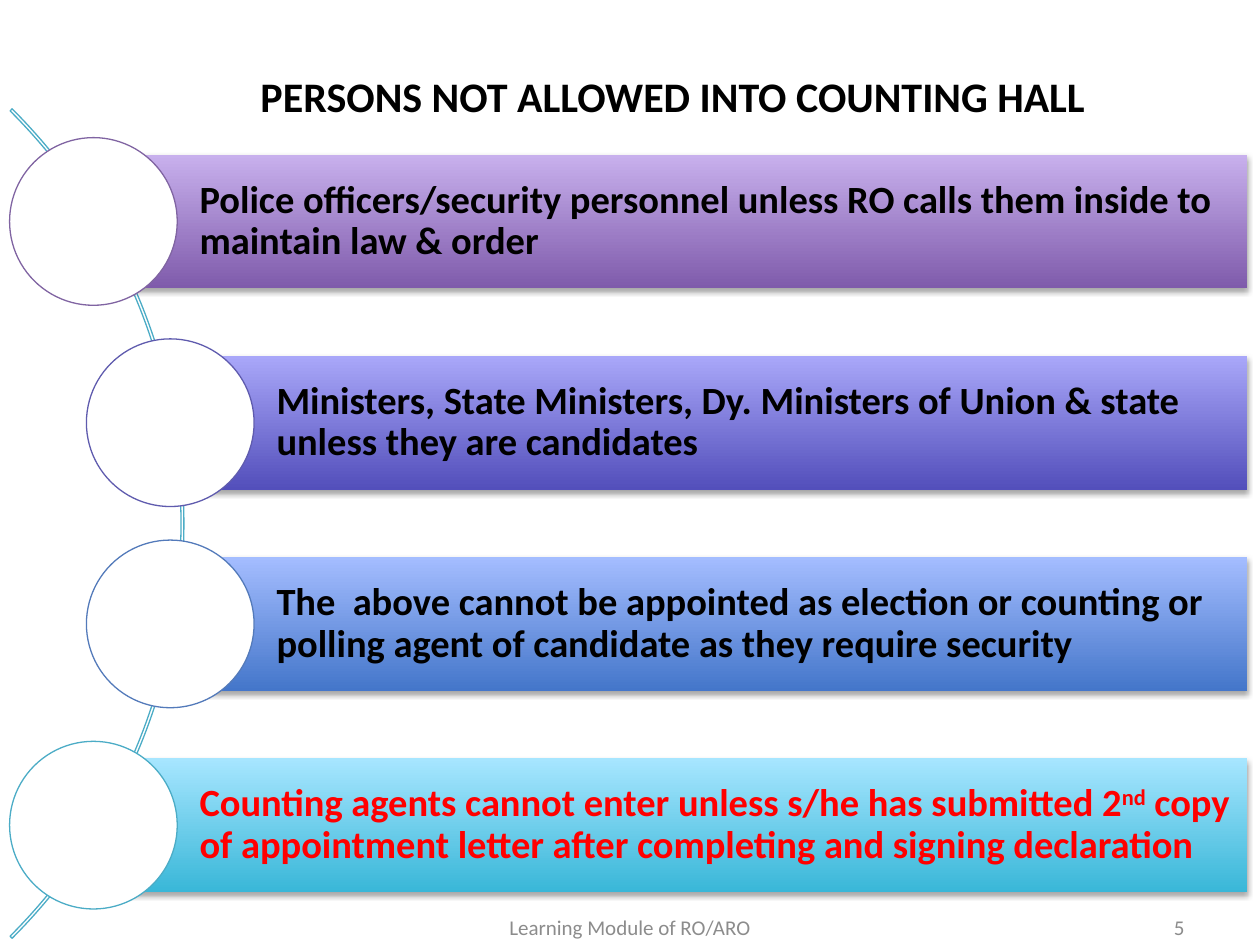
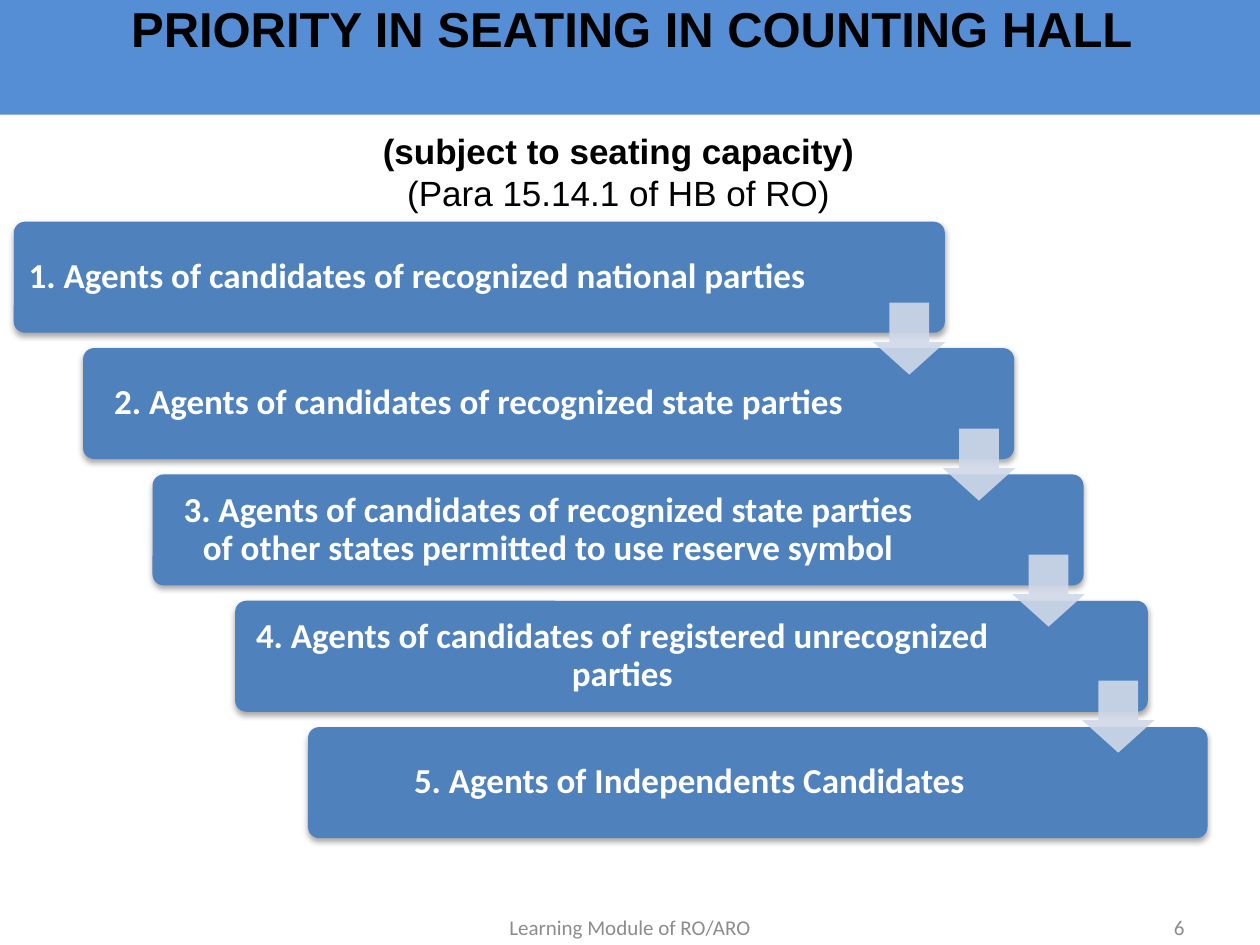
from dataclasses import dataclass

from lxml.etree import SubElement
from pptx import Presentation
from pptx.dml.color import RGBColor
from pptx.enum.shapes import MSO_SHAPE
from pptx.enum.text import MSO_ANCHOR, PP_ALIGN
from pptx.oxml.ns import qn
from pptx.util import Pt

BLACK, WHITE, RED = "000000", "FFFFFF", "FF0000"
FOOTER_GREY, TITLE_BLUE = "8C8C8C", "558ED5"
STEP_BLUE, ARROW_BLUE, ARC_TEAL = "4F81BD", "D0D8E8", "4BACC6"


@dataclass(frozen=True)
class Style:
    size: float
    color: str = BLACK
    bold: bool = False
    font: str = "Calibri"
    align: PP_ALIGN = PP_ALIGN.CENTER
    anchor: MSO_ANCHOR = MSO_ANCHOR.MIDDLE
    line_spacing: float = 1.0


@dataclass(frozen=True)
class Span:
    text: str
    bold: bool | None = None
    superscript: bool = False


@dataclass(frozen=True)
class Bar:
    left: float
    dark: str
    light: str
    outline: str
    spans: tuple[Span, ...]
    color: str = BLACK


@dataclass(frozen=True)
class Step:
    left: float
    width: float
    text_width: float
    text: str


FOOTER = Style(12, FOOTER_GREY)
PAGE_NUMBER = Style(12, FOOTER_GREY, align=PP_ALIGN.RIGHT)
HEADING = Style(24, bold=True, anchor=MSO_ANCHOR.TOP)
BAND_TITLE = Style(28, bold=True, font="Arial", anchor=MSO_ANCHOR.TOP)
SUBTITLE = Style(20, font="Arial", anchor=MSO_ANCHOR.TOP)
STEP_TEXT = Style(20, WHITE, bold=True, line_spacing=0.9)

OUTER, INNER = 53.4, 97.3
BARS = [
    Bar(OUTER, "7F5BAB", "C8B0ED", "8064A2",
        (Span("Police officers/security personnel unless RO calls them inside to maintain law & order"),)),
    Bar(INNER, "534FBB", "A9A7F9", "5F5BAE",
        (Span("Ministers, State Ministers, Dy. Ministers of Union & state unless they are candidates"),)),
    Bar(INNER, "4476CA", "A4BDFF", "537ABA",
        (Span("The  above cannot be appointed as election or counting or polling agent of candidate "
              "as they require security"),)),
    Bar(OUTER, "39B7D8", "A7E6FF", ARC_TEAL,
        (Span("Counting agents cannot enter unless s/he has submitted 2"),
         Span("nd", superscript=True),
         Span(" copy of appointment letter after completing and signing declaration")), RED),
]

STEPS = [
    Step(7.9, 532, 457, "1. Agents of candidates of recognized national parties"),
    Step(47.5, 532, 448, "2. Agents of candidates of recognized state parties"),
    Step(87.2, 532, 448, "3. Agents of candidates of recognized state parties "
                         "of other states permitted to use reserve symbol"),
    Step(134.4, 521.5, 438.5, "4. Agents of candidates of registered unrecognized parties"),
    Step(176, 514, 432, "5. Agents of Independents Candidates"),
]


def rgb(color: str) -> RGBColor:
    return RGBColor.from_string(color)


def write(box, paragraphs: list[tuple[Span, ...]], style: Style,
          margins: tuple[float, float, float, float] = (7.2, 3.6, 7.2, 3.6)) -> None:
    """Fill a box with styled paragraphs; margins run left, top, right, bottom."""
    frame = box.text_frame
    frame.word_wrap = True
    frame.vertical_anchor = style.anchor
    (frame.margin_left, frame.margin_top,
     frame.margin_right, frame.margin_bottom) = map(Pt, margins)
    for index, spans in enumerate(paragraphs):
        para = frame.add_paragraph() if index else frame.paragraphs[0]
        para.alignment = style.align
        para.line_spacing = style.line_spacing
        for span in spans:
            run = para.add_run()
            run.text = span.text
            run.font.name = style.font
            run.font.size = Pt(style.size)
            run.font.bold = style.bold if span.bold is None else span.bold
            run.font.color.rgb = rgb(style.color)
            if span.superscript:
                run.font._element.set("baseline", "30000")


def add_text(page, left: float, top: float, width: float, height: float,
             paragraphs: list[tuple[Span, ...]], style: Style, **options) -> None:
    box = page.shapes.add_textbox(Pt(left), Pt(top), Pt(width), Pt(height))
    write(box, paragraphs, style, **options)


def add_box(page, kind: MSO_SHAPE, left: float, top: float, width: float, height: float,
            fill: str | None = None, outline: str | None = None,
            adjustments: tuple[float, ...] = ()):
    shape = page.shapes.add_shape(kind, Pt(left), Pt(top), Pt(width), Pt(height))
    shape.shadow.inherit = False
    for index, value in enumerate(adjustments):
        shape.adjustments[index] = value
    if fill:
        shape.fill.solid()
        shape.fill.fore_color.rgb = rgb(fill)
    else:
        shape.fill.background()
    if outline:
        shape.line.color.rgb = rgb(outline)
        shape.line.width = Pt(0.75)
    else:
        shape.line.fill.background()
    return shape


def add_alpha(color_element, percent: int) -> None:
    SubElement(color_element, qn("a:alpha"), val=str(percent * 1000))


def add_shadow(shape) -> None:
    effects = shape._element.spPr.find(qn("a:effectLst"))
    shadow = SubElement(effects, qn("a:outerShdw"), blurRad=str(Pt(3.1)), dist=str(Pt(1.8)),
                        dir="5400000", rotWithShape="0")
    add_alpha(SubElement(shadow, qn("a:srgbClr"), val=BLACK), 35)


def add_gradient(shape, dark: str, light: str) -> None:
    shape.fill.gradient()
    shape.fill.gradient_angle = 90
    for stop, color in zip(shape.fill.gradient_stops, (dark, light)):
        stop.color.rgb = rgb(color)


def add_footer(page, number: int) -> None:
    top, height = 515.5, 28.8
    add_text(page, 246, top, 228, height, [(Span("Learning Module of RO/ARO"),)], FOOTER)
    add_text(page, 516, top, 168, height, [(Span(str(number)),)], PAGE_NUMBER)


def build_not_allowed(page) -> None:
    add_footer(page, 5)

    # Thin arc behind the circles
    add_box(page, MSO_SHAPE.BLOCK_ARC, -565.2, -36, 670.3, 670.3, outline=ARC_TEAL,
            adjustments=(189, 27, 1 / 400))

    # Bars, each with a circle centred on its left end
    first_top, pitch, height, right, diameter = 88.3, 115, 76.5, 712.8, 95.8
    for index, bar in enumerate(BARS):
        top = first_top + index * pitch
        shape = add_box(page, MSO_SHAPE.RECTANGLE, bar.left, top, right - bar.left, height)
        add_gradient(shape, bar.dark, bar.light)
        add_shadow(shape)
        style = Style(22, bar.color, bold=True, align=PP_ALIGN.LEFT, line_spacing=0.9)
        write(shape, [bar.spans], style, margins=(60.7, 4.4, 4.4, 4.4))
        add_box(page, MSO_SHAPE.OVAL, bar.left - diameter / 2, top + (height - diameter) / 2,
                diameter, diameter, WHITE, bar.outline)

    add_text(page, 139.7, 36.7, 489.6, 36,
             [(Span("PERSONS NOT ALLOWED INTO COUNTING HALL"),)], HEADING)


def build_seating_priority(page) -> None:
    # Title band
    band = add_box(page, MSO_SHAPE.RECTANGLE, 0, -2.9, 722, 68.4, TITLE_BLUE)
    write(band, [(Span("PRIORITY IN SEATING IN COUNTING HALL"),)], BAND_TITLE,
          margins=(7.2, 2, 7.2, 2))
    add_footer(page, 6)

    # Staircase of steps; the text keeps clear of the arrows
    first_top, pitch, height = 126.7, 72.2, 63.4
    for index, step in enumerate(STEPS):
        shape = add_box(page, MSO_SHAPE.ROUNDED_RECTANGLE, step.left, first_top + index * pitch,
                        step.width, height, STEP_BLUE, adjustments=(0.1,))
        add_shadow(shape)
        write(shape, [(Span(step.text),)], STEP_TEXT,
              margins=(6, 6, step.width - step.text_width + 2, 6))

    # Arrows between steps
    for index in range(len(STEPS) - 1):
        arrow = add_box(page, MSO_SHAPE.DOWN_ARROW, 499 + index * 39.8, 172.9 + index * 72,
                        41.2, 41.2, ARROW_BLUE, adjustments=(0.55, 0.45))
        add_alpha(arrow._element.spPr.find(qn("a:solidFill"))[0], 90)

    add_text(page, 23, 64.8, 661, 62,
             [(Span("(subject to seating capacity)", bold=True),),
              (Span("(Para 15.14.1 of HB of RO)"),)],
             SUBTITLE, margins=(7.2, 9.4, 7.2, 3.6))


def main() -> None:
    deck = Presentation()
    deck.slide_width, deck.slide_height = Pt(720), Pt(540)
    blank = deck.slide_layouts[6]
    for build in (build_not_allowed, build_seating_priority):
        build(deck.slides.add_slide(blank))
    deck.save("out.pptx")


if __name__ == "__main__":
    main()
